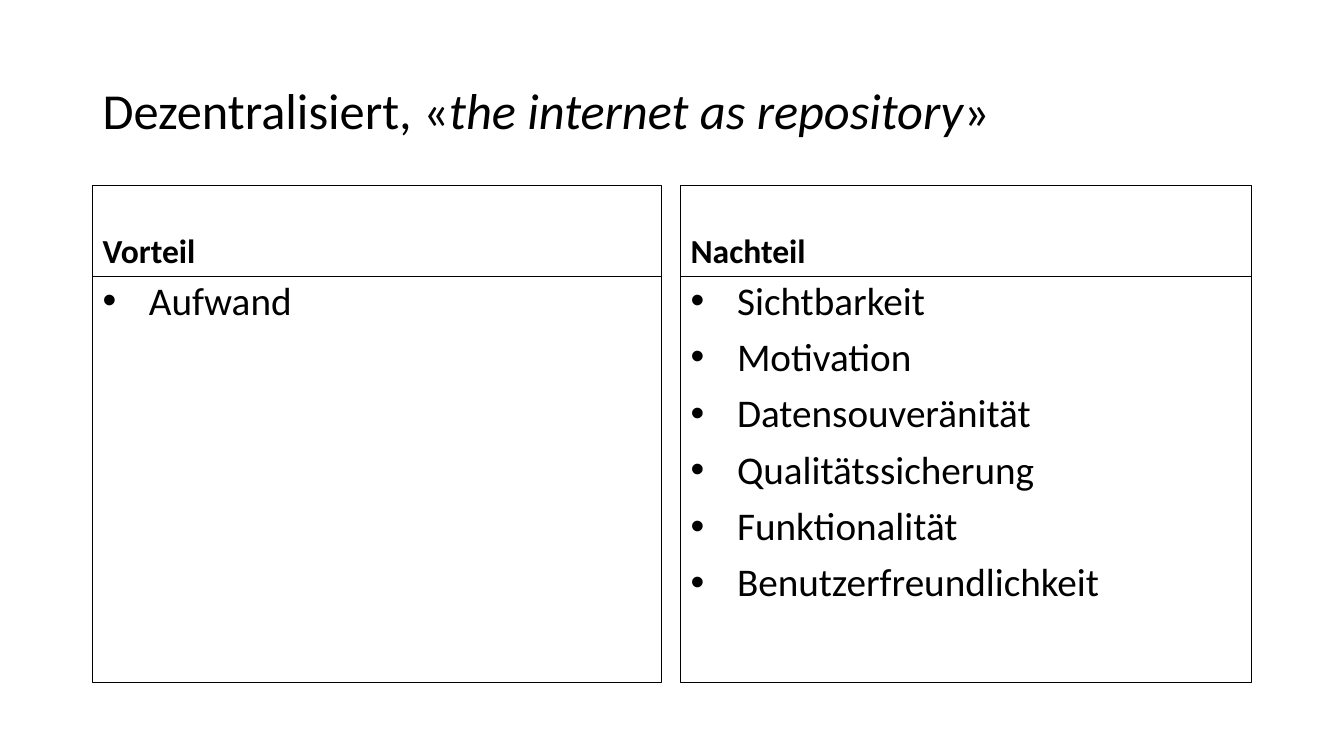
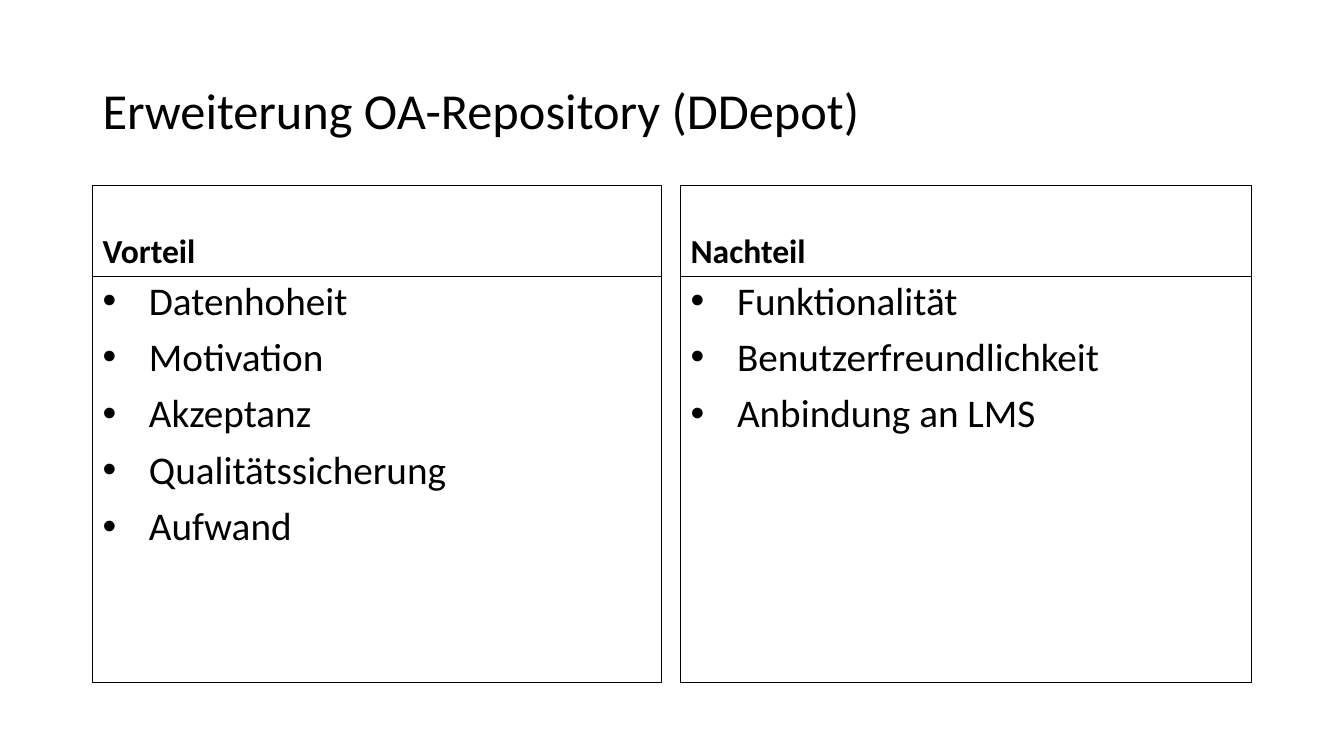
from pptx import Presentation
from pptx.dml.color import RGBColor
from pptx.enum.text import MSO_ANCHOR, MSO_AUTO_SIZE, PP_ALIGN
from pptx.util import Cm, Pt

BLACK = RGBColor(0x00, 0x00, 0x00)
WHITE = RGBColor(0xFF, 0xFF, 0xFF)
FONT = "Calibri"
COMPARISON_LAYOUT = 4

# Boxes: left, top, width, height
TITLE_BOX = (Cm(2.33), Cm(1.01), Cm(29.21), Cm(3.68))
LEFT_BOX = (Cm(2.33), Cm(4.67), Cm(14.33), Cm(12.53))
RIGHT_BOX = (Cm(17.15), Cm(4.67), Cm(14.4), Cm(12.53))
HEADING_HEIGHT = Cm(2.29)
BULLET_INDENT = Cm(1.17)

# Title as (text, italic) runs, then advantages and disadvantages
SLIDES = [
    (
        [("Dezentralisiert, «", False), ("the internet as repository", True), ("»", False)],
        ["Aufwand"],
        ["Sichtbarkeit", "Motivation", "Datensouveränität", "Qualitätssicherung",
         "Funktionalität", "Benutzerfreundlichkeit"],
    ),
    (
        [("Erweiterung OA-Repository (DDepot)", False)],
        ["Datenhoheit", "Motivation", "Akzeptanz", "Qualitätssicherung", "Aufwand"],
        ["Funktionalität", "Benutzerfreundlichkeit", "Anbindung an LMS"],
    ),
]


def place(sp, box, anchor):
    sp.left, sp.top, sp.width, sp.height = box
    tf = sp.text_frame
    tf.word_wrap = True
    tf.auto_size = MSO_AUTO_SIZE.NONE
    tf.vertical_anchor = anchor
    return tf


def format_text(tf, size, bold=False, space_before=0):
    for p in tf.paragraphs:
        p.alignment = PP_ALIGN.LEFT
        p.line_spacing = 0.9
        p.space_before = Pt(space_before)
        for r in p.runs:
            r.font.name = FONT
            r.font.size = Pt(size)
            r.font.bold = bold
            r.font.color.rgb = BLACK


def outline(sp):
    sp.line.color.rgb = BLACK
    sp.line.width = Pt(0.75)


def set_title(sp, box, runs):
    tf = place(sp, box, MSO_ANCHOR.MIDDLE)
    for text, italic in runs:
        r = tf.paragraphs[0].add_run()
        r.text = text
        r.font.italic = italic
    format_text(tf, 36)


def set_panel(heading, body, box, label, items):
    """Fill a framed column: heading on top, bullet list below."""
    left, top, width, height = box
    tf = place(heading, (left, top, width, HEADING_HEIGHT), MSO_ANCHOR.BOTTOM)
    tf.text = label
    format_text(tf, 24, bold=True, space_before=10)
    outline(heading)

    body_box = (left, top + HEADING_HEIGHT, width, height - HEADING_HEIGHT)
    tf = place(body, body_box, MSO_ANCHOR.TOP)
    tf.text = "\n".join(items)
    format_text(tf, 28, space_before=10)
    for p in tf.paragraphs:
        pPr = p._p.get_or_add_pPr()
        pPr.set("marL", str(BULLET_INDENT))
        pPr.set("indent", str(-BULLET_INDENT))
    outline(body)


def add_comparison(prs, title, advantages, disadvantages):
    s = prs.slides.add_slide(prs.slide_layouts[COMPARISON_LAYOUT])
    s.background.fill.solid()
    s.background.fill.fore_color.rgb = WHITE
    title_sp, left_head, left_body, right_head, right_body = s.placeholders
    set_title(title_sp, TITLE_BOX, title)
    set_panel(left_head, left_body, LEFT_BOX, "Vorteil", advantages)
    set_panel(right_head, right_body, RIGHT_BOX, "Nachteil", disadvantages)


def main():
    prs = Presentation()
    prs.slide_width, prs.slide_height = Cm(33.87), Cm(19.05)
    for title, advantages, disadvantages in SLIDES:
        add_comparison(prs, title, advantages, disadvantages)
    prs.save("out.pptx")


if __name__ == "__main__":
    main()
